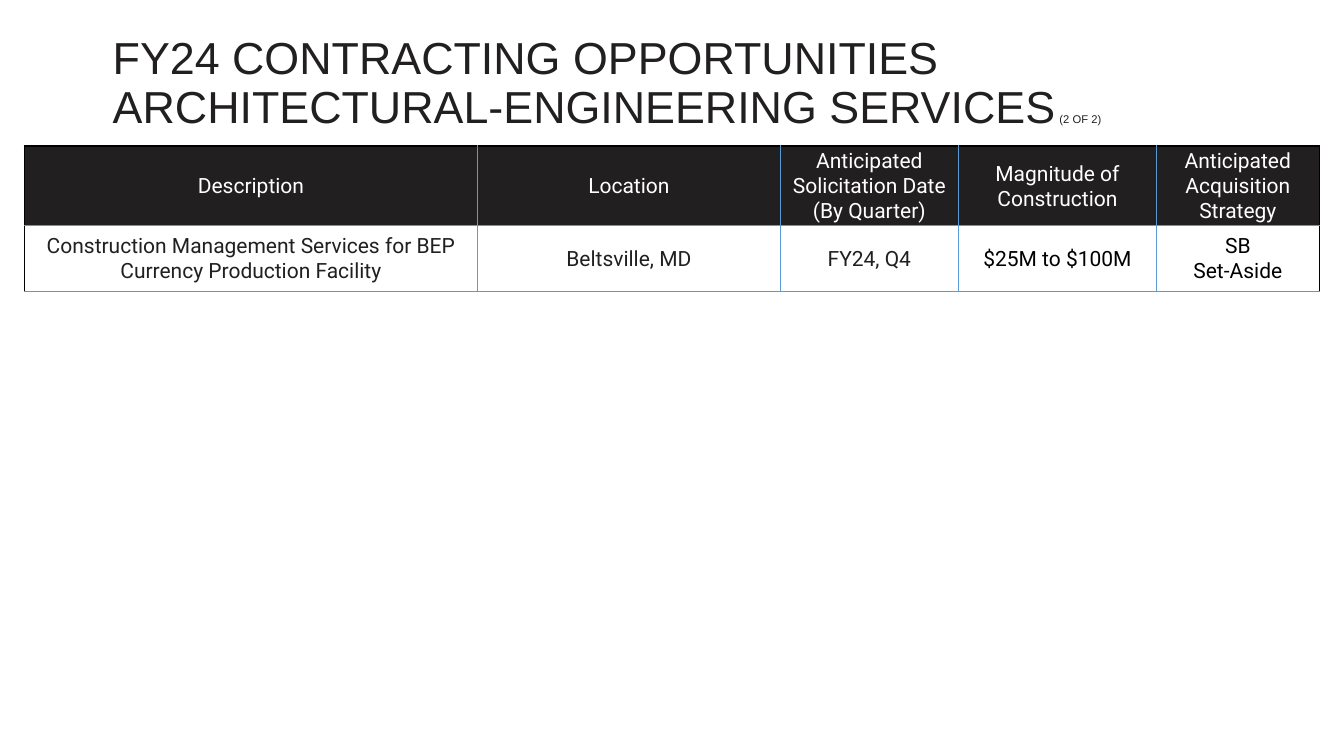
from lxml import etree
from pptx import Presentation
from pptx.dml.color import RGBColor
from pptx.enum.text import MSO_ANCHOR, MSO_AUTO_SIZE, PP_ALIGN
from pptx.oxml.ns import qn
from pptx.util import Cm, Pt

LEFT, CENTER = PP_ALIGN.LEFT, PP_ALIGN.CENTER
TOP, MIDDLE = MSO_ANCHOR.TOP, MSO_ANCHOR.MIDDLE
NO_AUTOFIT = MSO_AUTO_SIZE.NONE
TITLE_ONLY = 5

BLACK, WHITE, DARK, BLUE = "000000", "FFFFFF", "221F20", "5B9BD5"
OUTER, INNER = (BLACK, 1), (BLUE, 0.5)

TITLE = [
    [("FY24 CONTRACTING OPPORTUNITIES", 32)],
    [("ARCHITECTURAL-ENGINEERING SERVICES", 32), (" (2 OF 2)", 8)],
]
COLUMN_WIDTHS = [11.43, 7.62, 4.5, 4.98, 4.11]
ROW_HEIGHTS = [2.01, 1.65]
ROWS = [
    ["Description", "Location", "Anticipated\nSolicitation Date\n(By Quarter)",
     "Magnitude of\nConstruction", "Anticipated\nAcquisition Strategy"],
    ["Construction Management Services for BEP Currency Production Facility",
     "Beltsville, MD", "FY24, Q4", "$25M to $100M", "SB\nSet-Aside"],
]
TEXT_COLORS = [[WHITE] * 5, [DARK] * 3 + [BLACK] * 2]


def color(value):
    return RGBColor.from_string(value)


class Page:
    title_font, table_font, table_size = "Arial", "Roboto", 15

    def __init__(self, deck):
        self.slide = deck.slides.add_slide(deck.slide_layouts[TITLE_ONLY])

    def title(self, left, top, width, height, lines):
        box = self.slide.shapes.title
        box.left, box.top, box.width, box.height = map(Cm, (left, top, width, height))
        frame = box.text_frame
        frame.word_wrap, frame.auto_size, frame.vertical_anchor = True, NO_AUTOFIT, TOP
        frame.margin_left = frame.margin_top = frame.margin_right = frame.margin_bottom = 0
        for index, line in enumerate(lines):
            para = frame.add_paragraph() if index else frame.paragraphs[0]
            para.alignment, para.line_spacing = LEFT, 0.9
            para.space_before = Pt(0)
            para.font.name, para.font.color.rgb = self.title_font, color(DARK)
            for text, size in line:
                span = para.add_run()
                span.text, span.font.size = text, Pt(size)

    def table(self, left, top, widths, heights, rows, text_colors):
        table = self.slide.shapes.add_table(
            len(rows), len(widths), Cm(left), Cm(top), Cm(sum(widths)), Cm(sum(heights))).table
        table.first_row = table.horz_banding = False
        for column, width in zip(table.columns, widths):
            column.width = Cm(width)
        for row, height in zip(table.rows, heights):
            row.height = Cm(height)
        last = len(widths) - 1
        for r, texts in enumerate(rows):
            for c, text in enumerate(texts):
                cell = table.cell(r, c)
                self.cell_text(cell, text, text_colors[r][c])
                if r == 0:
                    cell.fill.solid()
                    cell.fill.fore_color.rgb = color(DARK)
                else:
                    cell.fill.background()
                self.cell_borders(cell, {
                    "L": OUTER if c == 0 else INNER,
                    "R": OUTER if c == last else INNER,
                    "T": OUTER if r == 0 else INNER,
                    "B": INNER,
                })

    def cell_text(self, cell, text, text_color):
        cell.vertical_anchor = MIDDLE
        cell.margin_left = cell.margin_top = cell.margin_right = Cm(0.03)
        cell.margin_bottom = 0
        cell.text_frame.text = text
        for para in cell.text_frame.paragraphs:
            para.alignment = CENTER
            para.font.name, para.font.size = self.table_font, Pt(self.table_size)
            para.font.color.rgb = color(text_color)

    def cell_borders(self, cell, borders):
        properties = cell._tc.get_or_add_tcPr()
        for index, (side, (line_color, width)) in enumerate(borders.items()):
            line = etree.Element(qn(f"a:ln{side}"), w=str(Pt(width)))
            fill = etree.SubElement(line, qn("a:solidFill"))
            etree.SubElement(fill, qn("a:srgbClr"), val=line_color)
            properties.insert(index, line)


def main():
    deck = Presentation()
    deck.slide_width, deck.slide_height = Cm(33.87), Cm(19.05)
    page = Page(deck)
    page.title(2.84, 0.91, 30, 1.47, TITLE)
    page.table(0.61, 3.68, COLUMN_WIDTHS, ROW_HEIGHTS, ROWS, TEXT_COLORS)
    deck.save("out.pptx")


if __name__ == "__main__":
    main()
